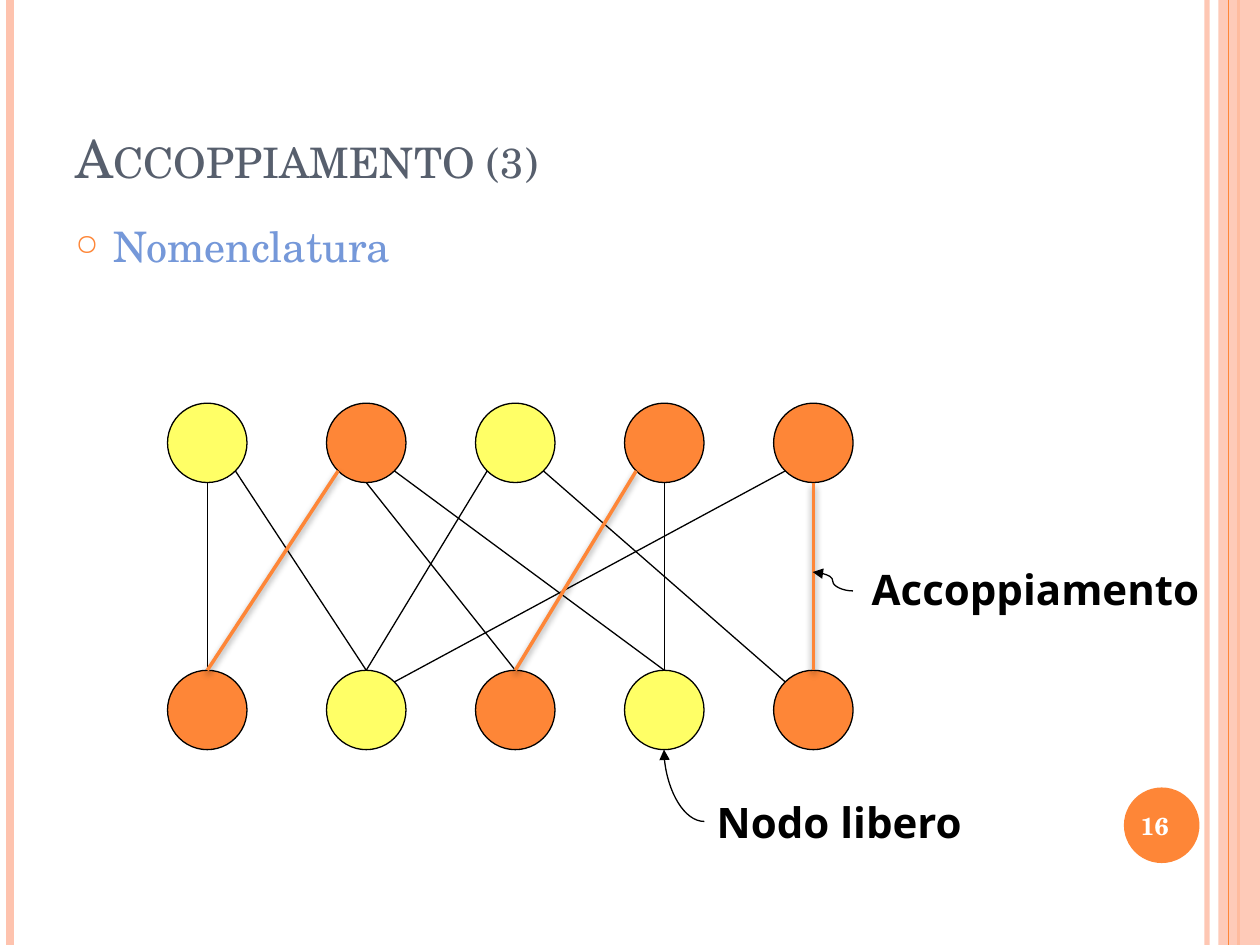
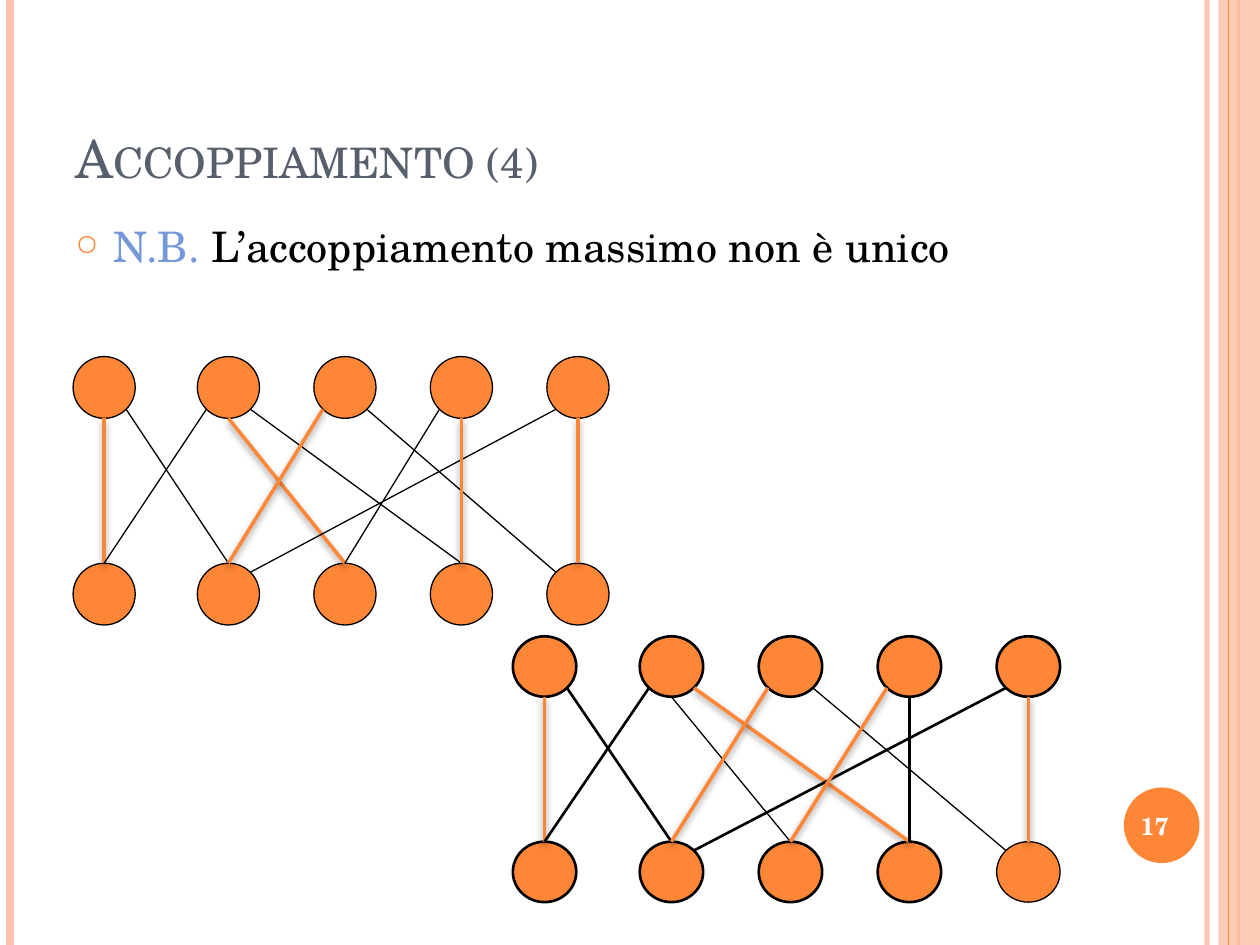
from math import sqrt
from lxml.etree import SubElement
from pptx import Presentation
from pptx.dml.color import RGBColor
from pptx.enum.shapes import MSO_CONNECTOR, MSO_SHAPE
from pptx.enum.text import MSO_ANCHOR, MSO_AUTO_SIZE, PP_ALIGN
from pptx.oxml.ns import qn
from pptx.util import Inches, Pt

COLORS = {
    "orange": "FE8637", "peach": "FEC3AE", "yellow": "FFFF66", "title": "575F6D",
    "accent": "7598D9", "black": "000000", "white": "FFFFFF",
}
SERIF, SANS = "TeX Gyre Schola", "Noto Sans"
WIDTH, HEIGHT = 10, 7.5

COLUMNS = (0, 2, 3.875, 5.75, 7.625)
EDGES = {
    (0, 1): (1, 0), (0, 0): (0, 0), (1, 3): (1, 0), (1, 2): (0, 0),
    (1, 0): (-1, 0), (4, 1): (-1, 1), (4, 4): (0, 0), (2, 4): (1, -1),
    (3, 2): (-1, 0), (3, 3): (0, 0), (2, 1): (-1, 0),
}

SLIDES = [
    {
        "number": 16,
        "title": "Accoppiamento (3)",
        "body": [("Nomenclatura", "accent")],
        "graphs": [{
            "left": 1.33, "top": 3.2, "span": 4.81, "drop": 2.12, "height": 0.63,
            "edges": [(0, 1), (0, 0), (1, 3), (1, 2), (1, 0), (4, 1), (4, 4),
                      (2, 4), (3, 2), (3, 3), (2, 1)],
            "matched": {(1, 0), (4, 4), (3, 2)},
            "free": {(0, 0), (0, 2), (1, 1), (1, 3)},
        }],
        "callouts": [
            ("Accoppiamento", (6.82, 4.42, 2.87, 0.5), (6.77, 4.69), (6.45, 4.54), "curvedConnector3"),
            ("Nodo libero", (5.59, 6.27, 2.23, 0.5), (5.59, 6.52), (5.27, 5.95), "curvedConnector2"),
        ],
    },
    {
        "number": 17,
        "title": "Accoppiamento (4)",
        "body": [("N.B. ", "accent"), ("L’accoppiamento massimo non è unico", "black")],
        "graphs": [
            {
                "left": 0.58, "top": 2.83, "span": 3.76, "drop": 1.64, "height": 0.49,
                "matched": {(0, 0), (1, 2), (4, 4), (3, 3), (2, 1)},
            },
            {
                "left": 4.07, "top": 5.05, "span": 3.84, "drop": 1.63, "height": 0.48,
                "matched": {(0, 0), (1, 3), (4, 4), (3, 2), (2, 1)},
                "outline": 1.5, "thin_edges": {(1, 2), (2, 4)}, "thin_nodes": {(1, 4)},
            },
        ],
        "callouts": [],
    },
]


def rgb(name):
    return RGBColor.from_string(COLORS[name])


def add_alpha(fill_parent, percent):
    color = next(fill_parent.iter(qn("a:srgbClr")))
    SubElement(color, qn("a:alpha"), val=str(percent * 1000))


def add_line(shapes, start, end, color, weight, kind=MSO_CONNECTOR.STRAIGHT, shadow=False):
    line = shapes.add_connector(kind, *(Inches(value) for value in (*start, *end)))
    line.line.color.rgb = rgb(color)
    line.line.width = Pt(weight)
    effects = SubElement(line._element.spPr, qn("a:effectLst"))
    if shadow:
        outer = SubElement(effects, qn("a:outerShdw"), blurRad=str(Pt(4)), dist=str(Pt(2)),
                           dir="5400000", rotWithShape="0")
        shade = SubElement(outer, qn("a:srgbClr"), val=COLORS["black"])
        SubElement(shade, qn("a:alpha"), val="40000")
    return line


def add_figure(shapes, preset, area, fill, outline=None):
    figure = shapes.add_shape(preset, *map(Inches, area))
    figure.shadow.inherit = False
    figure.fill.solid()
    figure.fill.fore_color.rgb = rgb(fill)
    if outline:
        figure.line.color.rgb = rgb("black")
        figure.line.width = Pt(outline)
    else:
        figure.line.fill.background()
    return figure


def add_text(shapes, area, runs, size, font=SERIF, bold=False, anchor=MSO_ANCHOR.TOP, wrap=True):
    box = shapes.add_textbox(*map(Inches, area))
    frame = box.text_frame
    frame.word_wrap = wrap
    frame.vertical_anchor = anchor
    frame.auto_size = MSO_AUTO_SIZE.NONE if wrap else MSO_AUTO_SIZE.SHAPE_TO_FIT_TEXT
    para = frame.paragraphs[0]
    for text, color in runs:
        span = para.add_run()
        span.text = text
        span.font.name = font
        span.font.size = Pt(size)
        span.font.bold = bold
        span.font.color.rgb = rgb(color)
    return para


def add_bullet(para):
    para.line_spacing = 0.9
    para.space_before = Pt(6)
    properties = para._p.get_or_add_pPr()
    properties.set("marL", str(Inches(0.3)))
    properties.set("indent", str(Inches(-0.3)))
    color = SubElement(properties, qn("a:buClr"))
    SubElement(color, qn("a:srgbClr"), val=COLORS["orange"])
    SubElement(properties, qn("a:buSzPct"), val="70000")
    SubElement(properties, qn("a:buChar"), char="○")


def add_frame(page, content):
    shapes = page.shapes

    def add_rule(x, color, weight):
        return add_line(shapes, (x, 0), (x, HEIGHT), color, weight)

    add_alpha(add_rule(9.58, "peach", 3)._element, 93)
    add_rule(0.08, "peach", 4.5)
    add_rule(9.83, "orange", 1.5)
    band = add_figure(shapes, MSO_SHAPE.RECTANGLE, (9.67, 0, 0.33, HEIGHT), "peach")
    add_alpha(band._element.spPr, 87)
    add_rule(9.75, "orange", 0.75)
    add_figure(shapes, MSO_SHAPE.OVAL, (8.92, 6.25, 0.6, 0.6), "orange")

    title = add_text(shapes, (0.5, 0.3, 8.17, 1.25), [(content["title"], "title")], 30,
                     anchor=MSO_ANCHOR.BOTTOM)
    title.runs[0].font._element.set("cap", "small")
    add_bullet(add_text(shapes, (0.5, 1.75, 8.17, 0.67), content["body"], 24))
    number = add_text(shapes, (8.83, 6.27, 0.67, 0.57), [(str(content["number"]), "white")], 14,
                      bold=True, anchor=MSO_ANCHOR.MIDDLE)
    number.alignment = PP_ALIGN.CENTER


def add_graph(page, graph):
    shapes = page.shapes.add_group_shape().shapes
    width, height = graph["span"] / COLUMNS[-1], graph["height"]
    outline = graph.get("outline", 0.75)

    def corner(row, column):
        return graph["left"] + COLUMNS[column] * width, graph["top"] + row * graph["drop"]

    def anchor(row, column, side):
        x, y = corner(row, column)
        inward = -1 if row else 1
        reach = 1 / sqrt(2) if side else 1
        return (x + width / 2 * (1 + side / sqrt(2)), y + height / 2 * (1 + inward * reach))

    for row in range(2):
        for column in range(len(COLUMNS)):
            node = (row, column)
            fill = "yellow" if node in graph.get("free", ()) else "orange"
            weight = 0.75 if node in graph.get("thin_nodes", ()) else outline
            add_figure(shapes, MSO_SHAPE.OVAL, (*corner(*node), width, height), fill, weight)

    for edge, (upper_side, lower_side) in EDGES.items():
        matched = edge in graph["matched"]
        weight = 0.75 if edge in graph.get("thin_edges", ()) else outline
        add_line(shapes, anchor(0, edge[0], upper_side), anchor(1, edge[1], lower_side),
                 "orange" if matched else "black", 2 if matched else weight, shadow=matched)


def add_callout(page, label, area, start, end, curve):
    shapes = page.shapes.add_group_shape().shapes
    add_text(shapes, area, [(label, "black")], 24, SANS, bold=True, wrap=False)
    arrow = add_line(shapes, start, end, "black", 0.75, MSO_CONNECTOR.CURVE)
    arrow._element.spPr.find(qn("a:prstGeom")).set("prst", curve)
    SubElement(arrow.line._get_or_add_ln(), qn("a:tailEnd"), type="triangle")


def main():
    deck = Presentation()
    deck.slide_width, deck.slide_height = Inches(WIDTH), Inches(HEIGHT)
    for content in SLIDES:
        page = deck.slides.add_slide(deck.slide_layouts[6])
        add_frame(page, content)
        for graph in content["graphs"]:
            add_graph(page, graph)
        for callout in content["callouts"]:
            add_callout(page, *callout)
    deck.save("out.pptx")


if __name__ == "__main__":
    main()
